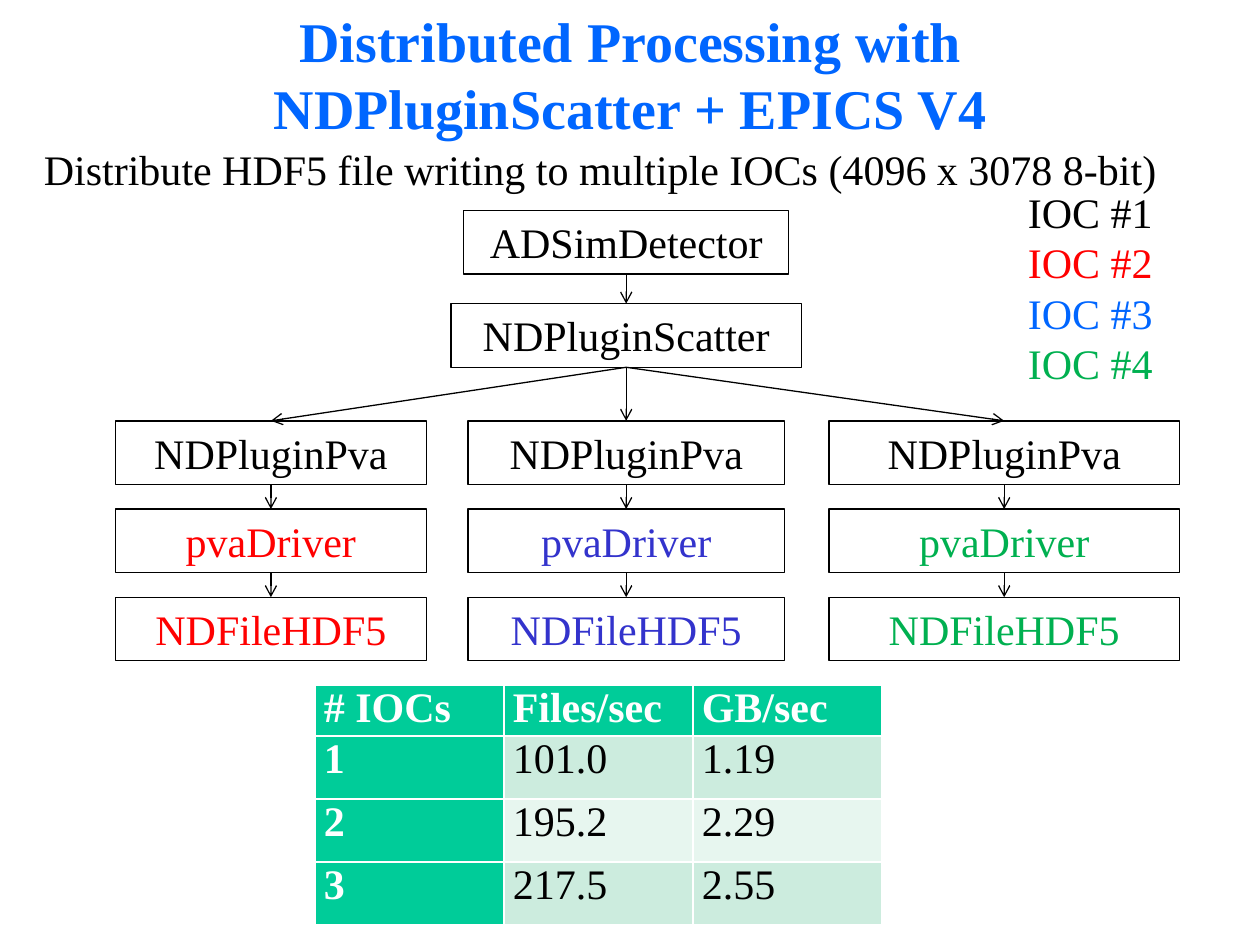
from dataclasses import dataclass
from itertools import pairwise

from lxml.etree import SubElement
from pptx import Presentation
from pptx.dml.color import RGBColor
from pptx.enum.shapes import MSO_CONNECTOR as Conn, MSO_SHAPE as Shape
from pptx.enum.text import MSO_ANCHOR as Anchor, PP_ALIGN as Align
from pptx.oxml.ns import qn
from pptx.util import Inches, Pt

COLS, ROWS = 100, 75
FONT = "Times New Roman"
BLACK, WHITE, RED, BLUE, INDIGO, GREEN, TEAL = (
    "000000", "FFFFFF", "FF0000", "0066FF", "3333CC", "00B050", "00CC99")
BANDS = ("CCECDE", "E7F6EF")
BOX_H = 5.05
STAGE_TOP, STAGE_STEP = 33.4, 7


@dataclass(frozen=True)
class Box:
    text: str
    center: float
    top: float
    width: float
    color: str = BLACK

    @property
    def bottom(self) -> float:
        return self.top + BOX_H


@dataclass(frozen=True)
class Branch:
    center: float
    width: float
    color: str

    def boxes(self) -> list[Box]:
        stages = (("NDPluginPva", BLACK), ("pvaDriver", self.color), ("NDFileHDF5", self.color))
        return [Box(text, self.center, STAGE_TOP + i * STAGE_STEP, self.width, color)
                for i, (text, color) in enumerate(stages)]


SOURCE = Box("ADSimDetector", 49.7, 16.7, 25.8)
SCATTER = Box("NDPluginScatter", 49.7, 24.1, 27.8)
BRANCHES = (Branch(21.5, 24.7, RED), Branch(49.7, 25.1, INDIGO), Branch(79.7, 27.8, GREEN))
LEGEND = (("IOC #1", BLACK), ("IOC #2", RED), ("IOC #3", BLUE), ("IOC #4", GREEN))
RATES = (
    ("# IOCs", "Files/sec", "GB/sec"),
    ("1", "101.0", "1.19"),
    ("2", "195.2", "2.29"),
    ("3", "217.5", "2.55"),
)

prs = Presentation()
prs.slide_width, prs.slide_height = Inches(10), Inches(7.5)
s = prs.slides.add_slide(prs.slide_layouts[6])


def x(cols: float) -> int:
    return round(prs.slide_width * cols / COLS)


def y(rows: float) -> int:
    return round(prs.slide_height * rows / ROWS)


def rgb(color: str) -> RGBColor:
    return RGBColor.from_string(color)


def write(p, text: str, *, size=24, color=BLACK, bold=False, align=Align.LEFT,
          spacing=None, before=None) -> None:
    p.alignment = align
    p.line_spacing = spacing
    p.space_before = before
    r = p.add_run()
    r.text = text
    r.font.name = FONT
    r.font.size = Pt(size)
    r.font.bold = bold
    r.font.color.rgb = rgb(color)


def text_frame(left: float, top: float, width: float, height: float):
    tf = s.shapes.add_textbox(x(left), y(top), x(width), y(height)).text_frame
    tf.word_wrap = True
    return tf


def draw_box(box: Box) -> None:
    sp = s.shapes.add_shape(Shape.RECTANGLE, x(box.center - box.width / 2), y(box.top),
                            x(box.width), y(BOX_H))
    sp.shadow.inherit = False
    sp.fill.background()
    sp.line.color.rgb = rgb(BLACK)
    sp.line.width = Pt(0.75)
    tf = sp.text_frame
    tf.vertical_anchor = Anchor.TOP
    write(tf.paragraphs[0], box.text, color=box.color, align=Align.CENTER)


def draw_arrow(start: Box, end: Box) -> None:
    line = s.shapes.add_connector(Conn.STRAIGHT, x(start.center), y(start.bottom),
                                  x(end.center), y(end.top))
    line.line.color.rgb = rgb(BLACK)
    line.line.width = Pt(0.75)
    SubElement(line.line._get_or_add_ln(), qn("a:tailEnd"), type="arrow")
    SubElement(line._element.spPr, qn("a:effectLst"))


def draw_table(left: float, top: float, col_width: float, heights: tuple) -> None:
    table = s.shapes.add_table(len(RATES), len(RATES[0]), x(left), y(top),
                               x(col_width * len(RATES[0])), y(sum(heights))).table
    table.first_col = True
    for col in table.columns:
        col.width = x(col_width)
    for i, (row, height) in enumerate(zip(RATES, heights)):
        table.rows[i].height = y(height)
        for j, text in enumerate(row):
            cell = table.cell(i, j)
            heading = i == 0 or j == 0
            cell.margin_left = cell.margin_right = Inches(0.07)
            cell.margin_top = cell.margin_bottom = 0
            cell.fill.solid()
            cell.fill.fore_color.rgb = rgb(TEAL if heading else BANDS[(i - 1) % 2])
            write(cell.text_frame.paragraphs[0], text, bold=heading,
                  color=WHITE if heading else BLACK, align=Align.JUSTIFY)


def main() -> None:
    tf = text_frame(9.2, 1.7, 81.7, 8.3)
    tf.vertical_anchor = Anchor.MIDDLE
    write(tf.paragraphs[0], "Distributed Processing with NDPluginScatter + EPICS V4",
          size=32, color=BLUE, bold=True, align=Align.CENTER)

    tf = text_frame(2.5, 11.7, 94.2, 5)
    write(tf.paragraphs[0], "Distribute HDF5 file writing to multiple IOCs (4096 x 3078 8-bit)",
          spacing=0.8, before=Pt(4.8))

    draw_table(25, 54.4, 15, (4, 5, 5, 5))

    draw_box(SOURCE)
    draw_box(SCATTER)
    draw_arrow(SOURCE, SCATTER)
    for branch in BRANCHES:
        boxes = branch.boxes()
        for box in boxes:
            draw_box(box)
        for start, end in pairwise([SCATTER, *boxes]):
            draw_arrow(start, end)

    tf = text_frame(80.6, 14.3, 13.3, 17.2)
    for i, (text, color) in enumerate(LEGEND):
        write(tf.add_paragraph() if i else tf.paragraphs[0], text, color=color)

    prs.save("out.pptx")


if __name__ == "__main__":
    main()
